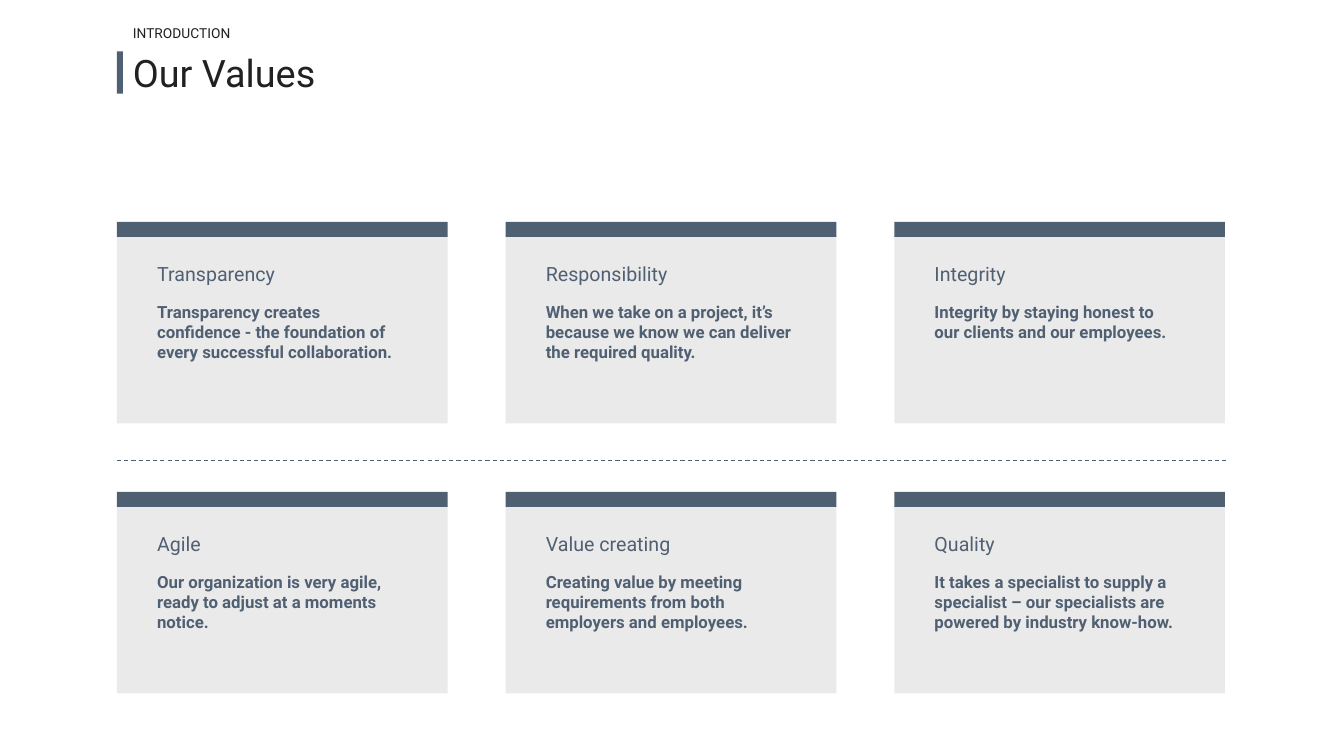
import pptx
import pptx.util
import pptx.dml.color
import pptx.enum.dml
import pptx.enum.shapes
import pptx.enum.text
from lxml import etree
from pptx.util import Inches

COLORS = {"slate": "506073", "panel": "EBEAEA", "ink": "212121"}
ANCHOR = pptx.enum.text.MSO_ANCHOR
VALUES = [
    ("Transparency", "Transparency creates confidence - the foundation of every successful collaboration."),
    ("Responsibility", "When we take on a project, it’s because we know we can deliver the required quality."),
    ("Integrity", "Integrity by staying honest to our clients and our employees."),
    ("Agile", "Our organization is very agile, ready to adjust at a moments notice."),
    ("Value creating", "Creating value by meeting requirements from both employers and employees."),
    ("Quality", "It takes a specialist to supply a specialist – our specialists are powered by industry know-how."),
]


def shade(name):
    return pptx.dml.color.RGBColor.from_string(COLORS[name])


def add_rect(shapes, left, top, width, height, color):
    rect = shapes.add_shape(
        pptx.enum.shapes.MSO_SHAPE.RECTANGLE,
        Inches(left), Inches(top), Inches(width), Inches(height))
    rect.shadow.inherit = False
    rect.fill.solid()
    rect.fill.fore_color.rgb = shade(color)
    rect.line.fill.background()


def add_text(shapes, left, top, width, height, text, size, color,
             anchor=ANCHOR.MIDDLE, bold=False, spacing=None):
    box = shapes.add_textbox(Inches(left), Inches(top), Inches(width), Inches(height))
    frame = box.text_frame
    frame.word_wrap = True
    frame.vertical_anchor = anchor
    para = frame.paragraphs[0]
    para.text = text
    para.line_spacing = spacing
    para.font.name = "Roboto"
    para.font.size = pptx.util.Pt(size)
    para.font.bold = bold
    para.font.color.rgb = shade(color)


def add_card(slide, left, top, title, body):
    shapes = slide.shapes.add_group_shape().shapes
    add_rect(shapes, left, top + 0.14, 3.28, 1.86, "panel")
    add_text(shapes, left + 0.3, top + 0.74, 2.64, 0.71, body, 12, "slate", ANCHOR.TOP, True)
    add_text(shapes, left + 0.3, top + 0.34, 2.64, 0.34, title, 14, "slate", ANCHOR.BOTTOM)
    add_rect(shapes, left, top, 3.28, 0.15, "slate")


def add_rule(slide, left, right, top):
    rule = slide.shapes.add_connector(
        pptx.enum.shapes.MSO_CONNECTOR.STRAIGHT,
        Inches(left), Inches(top), Inches(right), Inches(top))
    rule.line.color.rgb = shade("slate")
    rule.line.width = pptx.util.Pt(0.75)
    rule.line.dash_style = pptx.enum.dml.MSO_LINE.DASH
    etree.SubElement(rule._element.spPr, pptx.oxml.ns.qn("a:effectLst"))


def main():
    deck = pptx.Presentation()
    deck.slide_width = Inches(13.33)
    deck.slide_height = Inches(7.5)
    slide = deck.slides.add_slide(deck.slide_layouts[6])
    add_text(slide.shapes, 1.22, 0.51, 11.5, 0.47, "Our Values", 27, "ink", spacing=0.9)
    add_rect(slide.shapes, 1.16, 0.51, 0.06, 0.42, "slate")
    add_text(slide.shapes, 1.22, 0.22, 1.24, 0.25, "INTRODUCTION", 9.8, "ink", spacing=0.8)
    for index, (title, body) in enumerate(VALUES):
        row, col = divmod(index, 3)
        add_card(slide, 1.16 + col * 3.855, 2.2 + row * 2.68, title, body)
    add_rule(slide, 1.16, 12.18, 4.57)
    deck.save("out.pptx")


if __name__ == "__main__":
    main()
